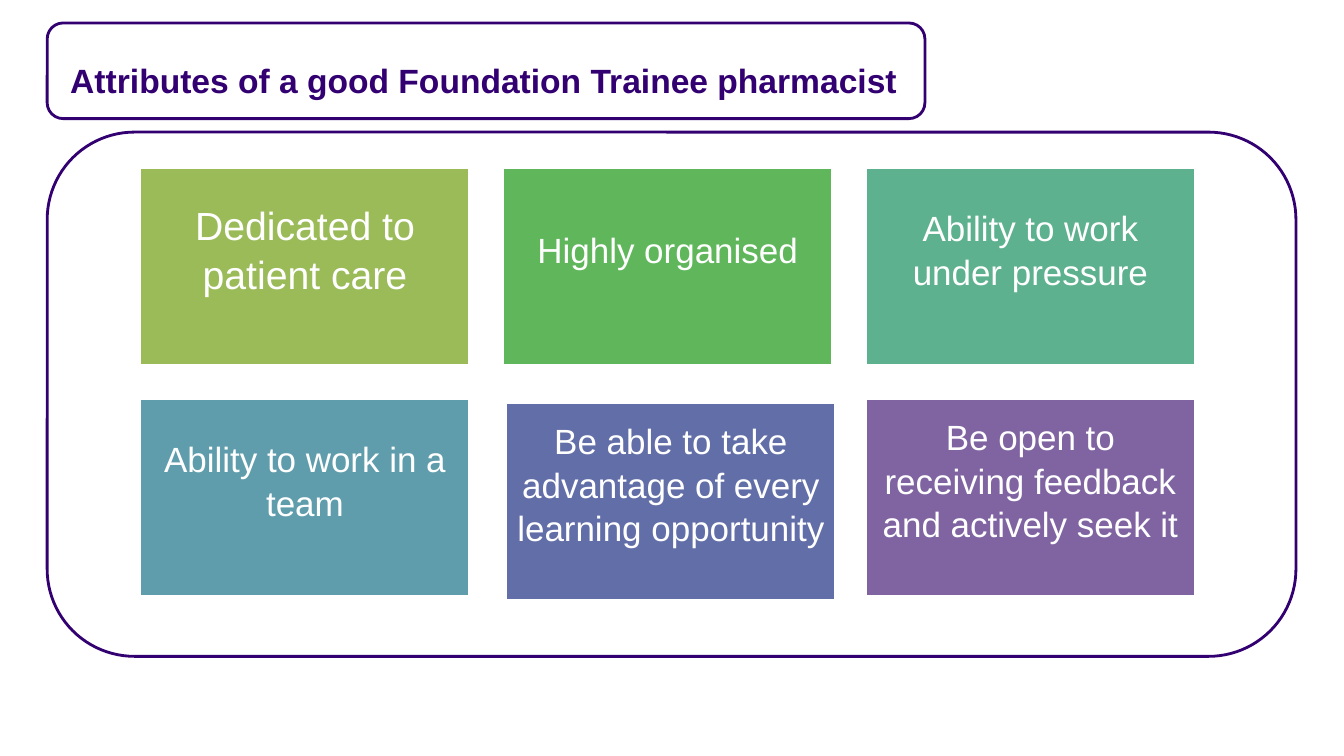
from pptx import Presentation
from pptx.dml.color import RGBColor
from pptx.enum.shapes import MSO_SHAPE
from pptx.enum.text import MSO_ANCHOR, PP_ALIGN
from pptx.util import Cm, Pt

RECT, ROUND = MSO_SHAPE.RECTANGLE, MSO_SHAPE.ROUNDED_RECTANGLE
TOP, MIDDLE = MSO_ANCHOR.TOP, MSO_ANCHOR.MIDDLE
LEFT, CENTER = PP_ALIGN.LEFT, PP_ALIGN.CENTER

COLORS = {
    "white": "FFFFFF", "purple": "330072", "olive": "9BBB59",
    "green": "5FB65B", "mint": "5DB18E", "teal": "5F9DAC",
    "blue": "626EA7", "violet": "8064A2",
}
TITLE = "Attributes of a good Foundation Trainee pharmacist"
# wording, fill, size in points, shift right and down in cm
CARDS = [
    ("Dedicated to patient care", "olive", 28, 0, 0),
    ("Highly organised", "green", 25, 0, 0),
    ("Ability to work under pressure", "mint", 25, 0, 0),
    ("Ability to work in a team", "teal", 25, 0, 0),
    ("Be able to take advantage of every learning opportunity",
     "blue", 25, 0.08, 0.1),
    ("Be open to receiving feedback and actively seek it",
     "violet", 25, 0, 0),
]
COLS = 3
CARD_X, CARD_Y, CARD_W, CARD_H = 3.53, 4.22, 8.31, 4.98
STEP_X, STEP_Y = 9.14, 5.82


def color(name):
    return RGBColor.from_string(COLORS[name])


def add_box(slide, kind, area, fill, line):
    box = slide.shapes.add_shape(kind, *map(Cm, area))
    box.shadow.inherit = False
    box.fill.solid()
    box.fill.fore_color.rgb = color(fill)
    box.line.color.rgb = color(line)
    box.line.width = Pt(2)
    return box


def set_text(shape, text, size, ink, align, anchor, insets, bold=False):
    """Fill a shape with one paragraph; insets are left, top, right, bottom."""
    frame = shape.text_frame
    frame.text = text
    frame.word_wrap = True
    frame.vertical_anchor = anchor
    (frame.margin_left, frame.margin_top,
     frame.margin_right, frame.margin_bottom) = map(Cm, insets)
    para = frame.paragraphs[0]
    para.alignment = align
    font = para.runs[0].font
    font.name, font.size, font.bold = "Arial", Pt(size), bold
    font.color.rgb = color(ink)
    return para


def add_title(slide):
    add_box(slide, ROUND, (1.19, 0.58, 22.12, 2.41), "white", "purple")
    label = slide.shapes.add_textbox(Cm(1.52), Cm(1.32), Cm(21.79), Cm(1.19))
    set_text(label, TITLE, 24, "purple", LEFT, TOP,
             (0.25, 0.2, 0.25, 0.13), bold=True)


def add_card(slide, index, text, fill, size, right, down):
    row, col = divmod(index, COLS)
    area = (CARD_X + col * STEP_X + right, CARD_Y + row * STEP_Y + down,
            CARD_W, CARD_H)
    card = add_box(slide, RECT, area, fill, "white")
    para = set_text(card, text, size, "white", CENTER, MIDDLE,
                    (0.24, 0.25, 0.24, 1.15))
    para.line_spacing = 1.04


def main():
    deck = Presentation()
    deck.slide_width, deck.slide_height = Cm(33.87), Cm(19.05)
    slide = deck.slides.add_slide(deck.slide_layouts[6])
    add_box(slide, ROUND, (1.19, 3.33, 31.47, 13.21), "white", "purple")
    add_title(slide)
    for index, card in enumerate(CARDS):
        add_card(slide, index, *card)
    deck.save("out.pptx")


if __name__ == "__main__":
    main()
